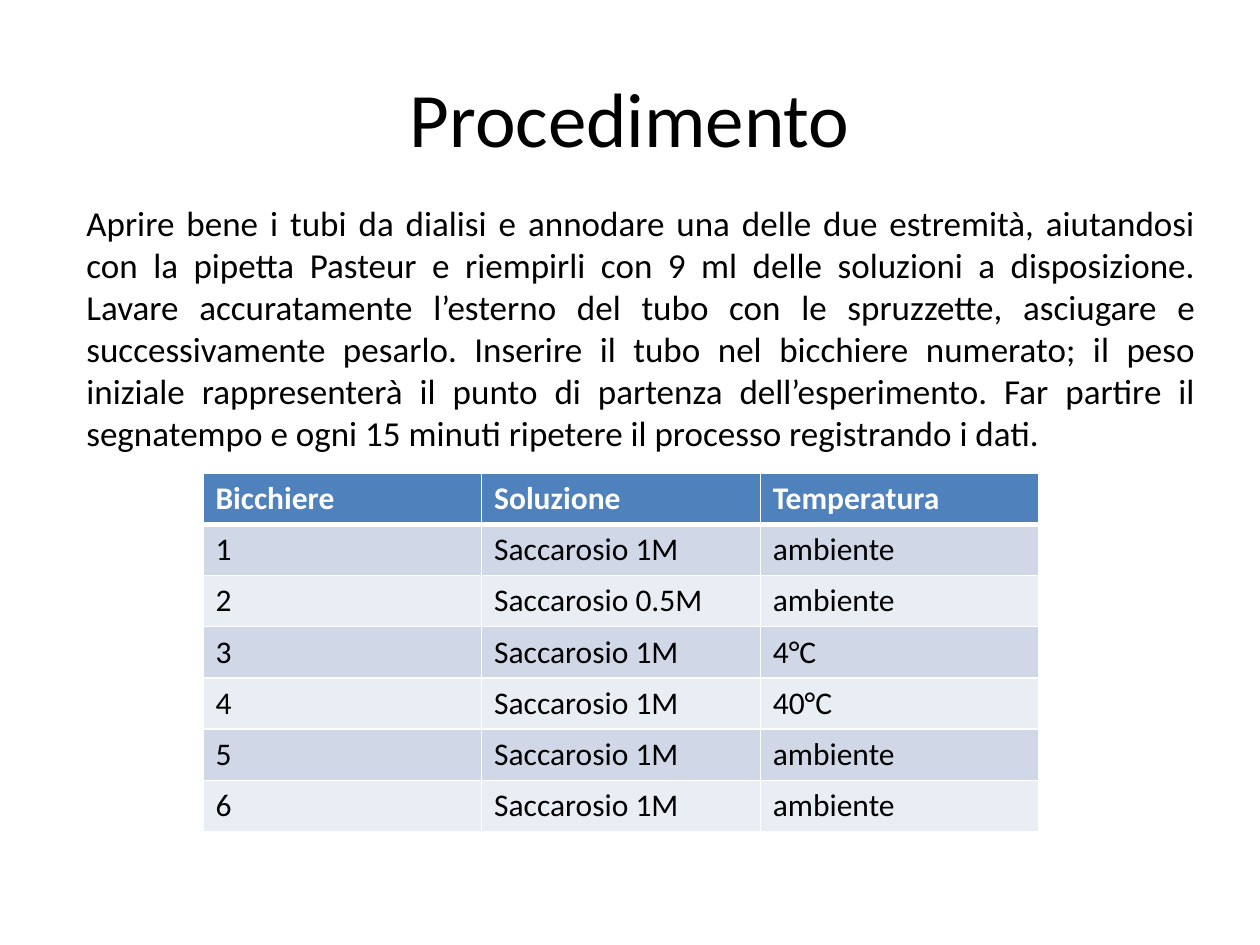
from pptx import Presentation
from pptx.dml.color import RGBColor
from pptx.enum.text import MSO_ANCHOR, PP_ALIGN
from pptx.oxml.ns import qn
from pptx.util import Pt
from lxml import etree

CENTER, JUSTIFY, LEFT = PP_ALIGN.CENTER, PP_ALIGN.JUSTIFY, PP_ALIGN.LEFT
TOP, MIDDLE = MSO_ANCHOR.TOP, MSO_ANCHOR.MIDDLE
SCALE = 914400 / 126
FONT = "Calibri"
COLORS = {
    "text": "000000",
    "white": "FFFFFF",
    "head": "4F81BD",
    "odd": "D0D8E8",
    "even": "E9EDF4",
}
STEPS = (
    "Aprire bene i tubi da dialisi e annodare una delle due estremità, "
    "aiutandosi con la pipetta Pasteur e riempirli con 9 ml delle soluzioni "
    "a disposizione. Lavare accuratamente l’esterno del tubo con le "
    "spruzzette, asciugare e successivamente pesarlo. Inserire il tubo nel "
    "bicchiere numerato; il peso iniziale rappresenterà il punto di partenza "
    "dell’esperimento. Far partire il segnatempo e ogni 15 minuti ripetere "
    "il processo registrando i dati."
)
ROWS = [
    ("Bicchiere", "Soluzione", "Temperatura"),
    ("1", "Saccarosio 1M", "ambiente"),
    ("2", "Saccarosio 0.5M", "ambiente"),
    ("3", "Saccarosio 1M", "4°C"),
    ("4", "Saccarosio 1M", "40°C"),
    ("5", "Saccarosio 1M", "ambiente"),
    ("6", "Saccarosio 1M", "ambiente"),
]


def px(size):
    """Turn pixels into EMU."""
    return round(size * SCALE)


def rgb(name):
    """Look up a named colour."""
    return RGBColor.from_string(COLORS[name])


def write(frame, text, size, align, color="text", bold=False):
    """Write one run into the first paragraph of a frame."""
    para = frame.paragraphs[0]
    para.alignment = align
    run = para.add_run()
    run.text = text
    font = run.font
    font.name, font.size, font.bold = FONT, Pt(size), bold
    font.color.rgb = rgb(color)


def add_title(slide, text, left, top, width, height):
    """Place and format the title."""
    title = slide.shapes.title
    title.left, title.top = px(left), px(top)
    title.width, title.height = px(width), px(height)
    title.text_frame.vertical_anchor = MIDDLE
    write(title.text_frame, text, 44, CENTER)


def add_body(slide, text, left, top, width, height):
    """Add the justified paragraph."""
    box = slide.shapes.add_textbox(px(left), px(top), px(width), px(height))
    frame = box.text_frame
    frame.word_wrap = True
    frame.vertical_anchor = TOP
    write(frame, text, 20, JUSTIFY)


def add_edge(cell, side, width):
    """Draw one white cell border."""
    props = cell._tc.get_or_add_tcPr()
    line = etree.SubElement(props, qn("a:ln" + side), w=str(Pt(width)))
    fill = etree.SubElement(line, qn("a:solidFill"))
    etree.SubElement(fill, qn("a:srgbClr"), val=COLORS["white"])


def style_cell(cell, text, row):
    """Give a cell its borders, fill and text."""
    widths = {"L": 1, "R": 1, "T": 3 if row == 1 else 1, "B": 1 if row else 3}
    for side, width in widths.items():
        add_edge(cell, side, width)
    head = row == 0
    band = "head" if head else "odd" if row % 2 else "even"
    cell.fill.solid()
    cell.fill.fore_color.rgb = rgb(band)
    write(cell.text_frame, text, 18, LEFT, "white" if head else "text", head)


def add_grid(slide, rows, left, top, width, height):
    """Add the table with equal rows and columns."""
    count, span = len(rows), len(rows[0])
    table = slide.shapes.add_table(
        count, span, px(left), px(top), px(width), px(height)
    ).table
    for i, row in enumerate(rows):
        for j, text in enumerate(row):
            style_cell(table.cell(i, j), text, i)


def main():
    """Build and save the slide."""
    deck = Presentation()
    deck.slide_width, deck.slide_height = px(1260), px(945)
    slide = deck.slides.add_slide(deck.slide_layouts[5])
    add_title(slide, "Procedimento", 63, 38, 1134, 158)
    add_body(slide, STEPS, 74, 195, 1134, 725)
    add_grid(slide, ROWS, 203, 473, 836, 359)
    deck.save("out.pptx")


if __name__ == "__main__":
    main()
